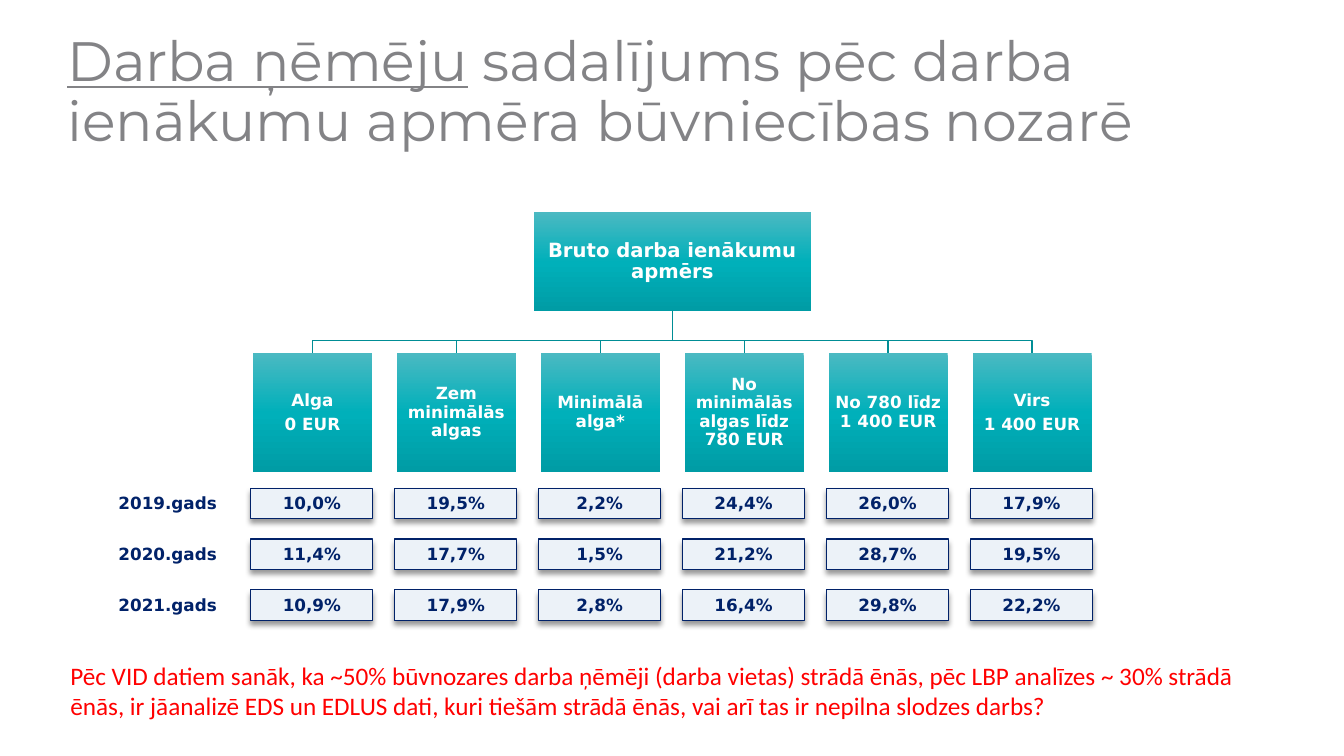
from dataclasses import dataclass

import pptx
import pptx.dml.color
import pptx.enum.shapes
import pptx.enum.text
import pptx.oxml.ns
import pptx.util
from lxml import etree

Pt = pptx.util.Pt
qn = pptx.oxml.ns.qn
RECTANGLE = pptx.enum.shapes.MSO_SHAPE.RECTANGLE
ALIGN = pptx.enum.text.PP_ALIGN
ANCHOR = pptx.enum.text.MSO_ANCHOR
AUTO_SIZE = pptx.enum.text.MSO_AUTO_SIZE


@dataclass(frozen=True)
class Theme:
    title_font: str = "Montserrat"
    chart_font: str = "DejaVu Sans"
    note_font: str = "Calibri"
    title_size: float = 39.6
    root_size: int = 14
    label_size: int = 12
    note_size: int = 18
    grey: str = "838386"
    white: str = "FFFFFF"
    navy: str = "012269"
    pale: str = "ECF2F8"
    teal: str = "008D95"
    red: str = "FF0000"
    gradient: tuple = ((0, "4BB9C2"), (50, "00B0BA"), (100, "009CA5"))


THEME = Theme()

TITLE = ("Darba ņēmēju", " sadalījums pēc darba ienākumu apmēra būvniecības nozarē")
ROOT = "Bruto darba ienākumu apmērs"
BANDS = [
    ["Alga", "0 EUR"],
    ["Zem minimālās algas"],
    ["Minimālā alga*"],
    ["No minimālās algas līdz 780 EUR"],
    ["No 780 līdz 1 400 EUR"],
    ["Virs", "1 400 EUR"],
]
SHARES = {
    "2019.gads": ["10,0%", "19,5%", "2,2%", "24,4%", "26,0%", "17,9%"],
    "2020.gads": ["11,4%", "17,7%", "1,5%", "21,2%", "28,7%", "19,5%"],
    "2021.gads": ["10,9%", "17,9%", "2,8%", "16,4%", "29,8%", "22,2%"],
}
NOTE = (
    "Pēc VID datiem sanāk, ka ~50% būvnozares darba ņēmēji (darba vietas) strādā ēnās, "
    "pēc LBP analīzes ~ 30% strādā ēnās, ir jāanalizē EDS un EDLUS dati, kuri tiešām "
    "strādā ēnās, vai arī tas ir nepilna slodzes darbs?"
)
BAND_PITCH = 102.8


def rgb(value):
    return pptx.dml.color.RGBColor.from_string(value)


def set_all(target, values):
    for name, value in values.items():
        setattr(target, name, value)


def style_font(font, family, size, color, **extra):
    set_all(font, {"name": family, "size": Pt(size), **extra})
    font.color.rgb = rgb(color)


def write(shape, lines, font, frame_format, paragraph_format):
    """Fill a shape with one paragraph per line."""
    frame = shape.text_frame
    set_all(frame, {"word_wrap": True, **frame_format})
    for index, line in enumerate(lines):
        paragraph = frame.add_paragraph() if index else frame.paragraphs[0]
        set_all(paragraph, paragraph_format)
        run = paragraph.add_run()
        run.text = line
        style_font(run.font, **font)


def add_title(slide, left, top, width, height):
    title = slide.shapes.add_textbox(Pt(left), Pt(top), Pt(width), Pt(height))
    set_all(title.text_frame, {"word_wrap": True, "vertical_anchor": ANCHOR.MIDDLE})
    paragraph = title.text_frame.paragraphs[0]
    paragraph.line_spacing = 0.9
    for words, underlined in zip(TITLE, (True, False)):
        run = paragraph.add_run()
        run.text = words
        style_font(run.font, THEME.title_font, THEME.title_size, THEME.grey,
                   underline=underlined)


def add_card(slide, lines, size, left, top, width, height):
    """Add a teal rectangle shaded from top to bottom."""
    card = slide.shapes.add_shape(RECTANGLE, Pt(left), Pt(top), Pt(width), Pt(height))
    gradient = etree.Element(qn("a:gradFill"), rotWithShape="1")
    stops = etree.SubElement(gradient, qn("a:gsLst"))
    for percent, color in THEME.gradient:
        stop = etree.SubElement(stops, qn("a:gs"), pos=str(percent * 1000))
        etree.SubElement(stop, qn("a:srgbClr"), val=color)
    etree.SubElement(gradient, qn("a:lin"), ang="5400000", scaled="0")
    card._element.spPr.find(qn("a:prstGeom")).addnext(gradient)
    card.line.fill.background()
    card.shadow.inherit = False
    margins = {f"margin_{side}": Pt(0.7) for side in ("left", "top", "right", "bottom")}
    write(card, lines,
          {"family": THEME.chart_font, "size": size, "color": THEME.white, "bold": True},
          {"vertical_anchor": ANCHOR.MIDDLE, **margins},
          {"alignment": ALIGN.CENTER, "line_spacing": 0.9, "space_after": Pt(0.35 * size)})


def add_branch(slide, start, bend, end):
    """Draw the elbow from start down to the bend height, across and down to end."""
    (start_x, start_y), (end_x, end_y) = start, end
    outline = slide.shapes.build_freeform(Pt(start_x), Pt(start_y))
    corners = [(start_x, bend), (end_x, bend), (end_x, end_y)]
    outline.add_line_segments([(Pt(x), Pt(y)) for x, y in corners], close=False)
    branch = outline.convert_to_shape()
    branch.fill.background()
    branch.line.color.rgb = rgb(THEME.teal)
    branch.line.width = Pt(1)
    branch.shadow.inherit = False


def add_tree(slide, left, top, width, height):
    root_width, root_height, card_side = 198, 70.8, 85
    center = left + width / 2
    root_bottom = top + root_height
    card_top = top + height - card_side
    lefts = [left + BAND_PITCH * column for column in range(len(BANDS))]
    for card_left in reversed(lefts):
        add_branch(slide, (center, root_bottom), card_top - 8.8,
                   (card_left + card_side / 2, card_top))
    add_card(slide, [ROOT], THEME.root_size, center - root_width / 2, top,
             root_width, root_height)
    for lines, card_left in zip(BANDS, lefts):
        add_card(slide, lines, THEME.label_size, card_left, card_top, card_side, card_side)


def add_soft_shadow(shape):
    shape.shadow.inherit = False
    effects = shape._element.spPr.find(qn("a:effectLst"))
    shadow = etree.SubElement(effects, qn("a:outerShdw"), blurRad=str(Pt(4)),
                              dist=str(Pt(3)), dir="5400000", algn="t", rotWithShape="0")
    color = etree.SubElement(shadow, qn("a:srgbClr"), val="000000")
    etree.SubElement(color, qn("a:alpha"), val="40000")


def add_shares(slide, left, top, width, height):
    """Place one row per year: the year, then a framed share under each band."""
    cell_width, cell_height, year_gap = 87.2, 21.8, 103
    row_pitch = (height - cell_height) / (len(SHARES) - 1)
    first_share = left + year_gap
    share_pitch = (width - year_gap - cell_width) / (len(BANDS) - 1)
    font = {"family": THEME.chart_font, "size": THEME.label_size,
            "color": THEME.navy, "bold": True}
    frame_format = {"auto_size": AUTO_SIZE.SHAPE_TO_FIT_TEXT}
    centered = {"alignment": ALIGN.CENTER}
    for row, (year, shares) in enumerate(SHARES.items()):
        row_top = top + row * row_pitch
        label = slide.shapes.add_textbox(Pt(left), Pt(row_top), Pt(cell_width), Pt(cell_height))
        write(label, [year], font, frame_format, centered)
        for column, share in enumerate(shares):
            cell = slide.shapes.add_shape(
                RECTANGLE, Pt(first_share + column * share_pitch), Pt(row_top),
                Pt(cell_width), Pt(cell_height))
            cell.fill.solid()
            cell.fill.fore_color.rgb = rgb(THEME.pale)
            cell.line.color.rgb = rgb(THEME.navy)
            cell.line.width = Pt(0.75)
            add_soft_shadow(cell)
            write(cell, [share], font,
                  {"vertical_anchor": ANCHOR.TOP, **frame_format}, centered)


def add_note(slide, left, top, width, height):
    note = slide.shapes.add_textbox(Pt(left), Pt(top), Pt(width), Pt(height))
    write(note, [NOTE],
          {"family": THEME.note_font, "size": THEME.note_size, "color": THEME.red},
          {"auto_size": AUTO_SIZE.SHAPE_TO_FIT_TEXT}, {"alignment": ALIGN.LEFT})


def main():
    deck = pptx.Presentation()
    set_all(deck, {"slide_width": Pt(960), "slide_height": Pt(540)})
    slide = deck.slides.add_slide(deck.slide_layouts[6])
    add_title(slide, 41, 26, 828, 81.4)
    add_tree(slide, 180.7, 151.7, 599, 185.5)
    add_shares(slide, 76.2, 348.6, 704.2, 94.6)
    add_note(slide, 43.2, 468, 880, 51)
    deck.save("out.pptx")


if __name__ == "__main__":
    main()
